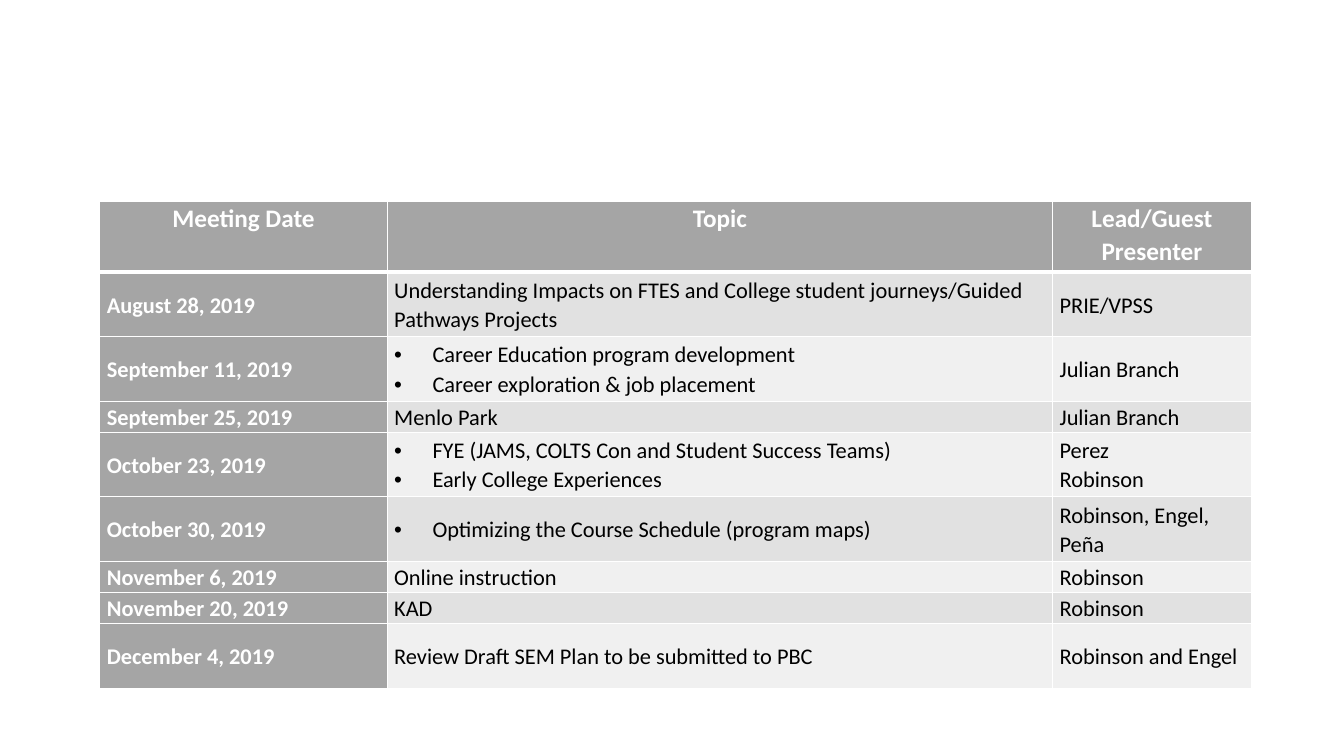
from lxml import etree
from pptx import Presentation
from pptx.dml.color import RGBColor
from pptx.enum import text
from pptx.oxml import ns
from pptx.util import Inches, Pt

WHITE, BLACK, GRAY = "FFFFFF", "000000", "A5A5A5"
BANDS = ["F0F0F0", "E1E1E1"]

# Each cell lists its paragraphs; a leading bullet marks a list item.
HEADINGS = [["Meeting Date"], ["Topic"], ["Lead/Guest Presenter"]]
MEETINGS = [
    [["August 28, 2019"],
     ["Understanding Impacts on FTES and College student journeys/Guided Pathways Projects"],
     ["PRIE/VPSS"]],
    [["September 11, 2019"],
     ["•Career Education program development", "•Career exploration & job placement"],
     ["Julian Branch"]],
    [["September 25, 2019"], ["Menlo Park"], ["Julian Branch"]],
    [["October 23, 2019"],
     ["•FYE (JAMS, COLTS Con and Student Success Teams)", "•Early College Experiences"],
     ["Perez", "Robinson"]],
    [["October 30, 2019"],
     ["•Optimizing the Course Schedule (program maps)"],
     ["Robinson, Engel, Peña"]],
    [["November 6, 2019"], ["Online instruction"], ["Robinson"]],
    [["November 20, 2019"], ["KAD"], ["Robinson"]],
    [["December 4, 2019"], ["Review Draft SEM Plan to be submitted to PBC"],
     ["Robinson and Engel"]],
]
COLUMN_WIDTHS = [2.85, 6.6, 1.97]
ROW_HEIGHTS = [0.7, 0.64, 0.64, 0.31, 0.64, 0.64, 0.31, 0.31, 0.64]


def rgb(color):
    return RGBColor.from_string(color)


def add_border(cell, side, points):
    """Draw a white line on one side (L, R, T or B); call before filling the cell."""
    line = etree.SubElement(cell._tc.get_or_add_tcPr(), ns.qn(f"a:ln{side}"), w=str(Pt(points)))
    fill = etree.SubElement(line, ns.qn("a:solidFill"))
    etree.SubElement(fill, ns.qn("a:srgbClr"), val=WHITE)


prs = Presentation()
prs.slide_width, prs.slide_height = Inches(13.33), Inches(7.5)
slide = prs.slides.add_slide(prs.slide_layouts[6])

schedule = slide.shapes.add_table(
    len(ROW_HEIGHTS), len(COLUMN_WIDTHS), Inches(0.99), Inches(2),
    Inches(sum(COLUMN_WIDTHS)), Inches(sum(ROW_HEIGHTS))).table
for column, width in zip(schedule.columns, COLUMN_WIDTHS):
    column.width = Inches(width)
for row, height in zip(schedule.rows, ROW_HEIGHTS):
    row.height = Inches(height)

for r, entries in enumerate([HEADINGS] + MEETINGS):
    for c, lines in enumerate(entries):
        cell = schedule.cell(r, c)
        is_heading = r == 0
        is_label = is_heading or c == 0

        for side in "LRTB":
            under_heading = (r, side) in [(0, "B"), (1, "T")]
            add_border(cell, side, 3 if under_heading else 1)
        cell.fill.solid()
        cell.fill.fore_color.rgb = rgb(GRAY if is_label else BANDS[r % 2])
        cell.margin_left = cell.margin_right = Inches(0.07)
        cell.margin_top = cell.margin_bottom = 0
        cell.vertical_anchor = text.MSO_ANCHOR.TOP if is_heading else text.MSO_ANCHOR.MIDDLE

        cell.text = "\n".join(line.lstrip("•") for line in lines)
        for paragraph, line in zip(cell.text_frame.paragraphs, lines):
            paragraph.alignment = text.PP_ALIGN.CENTER if is_heading else text.PP_ALIGN.LEFT
            paragraph.line_spacing = 1.07
            paragraph.font.name = "Calibri"
            paragraph.font.size = Pt(18 if is_heading else 16)
            paragraph.font.bold = is_label
            paragraph.font.color.rgb = rgb(WHITE if is_label else BLACK)
            if line.startswith("•"):
                properties = paragraph._p.get_or_add_pPr()
                properties.set("marL", str(Inches(0.38)))
                properties.set("indent", str(-Inches(0.38)))
                bullet_font = etree.Element(ns.qn("a:buFont"), typeface="Arial")
                bullet = etree.Element(ns.qn("a:buChar"), char="•")
                spacing = properties.find(ns.qn("a:lnSpc"))
                spacing.addnext(bullet_font)
                bullet_font.addnext(bullet)

prs.save("out.pptx")
